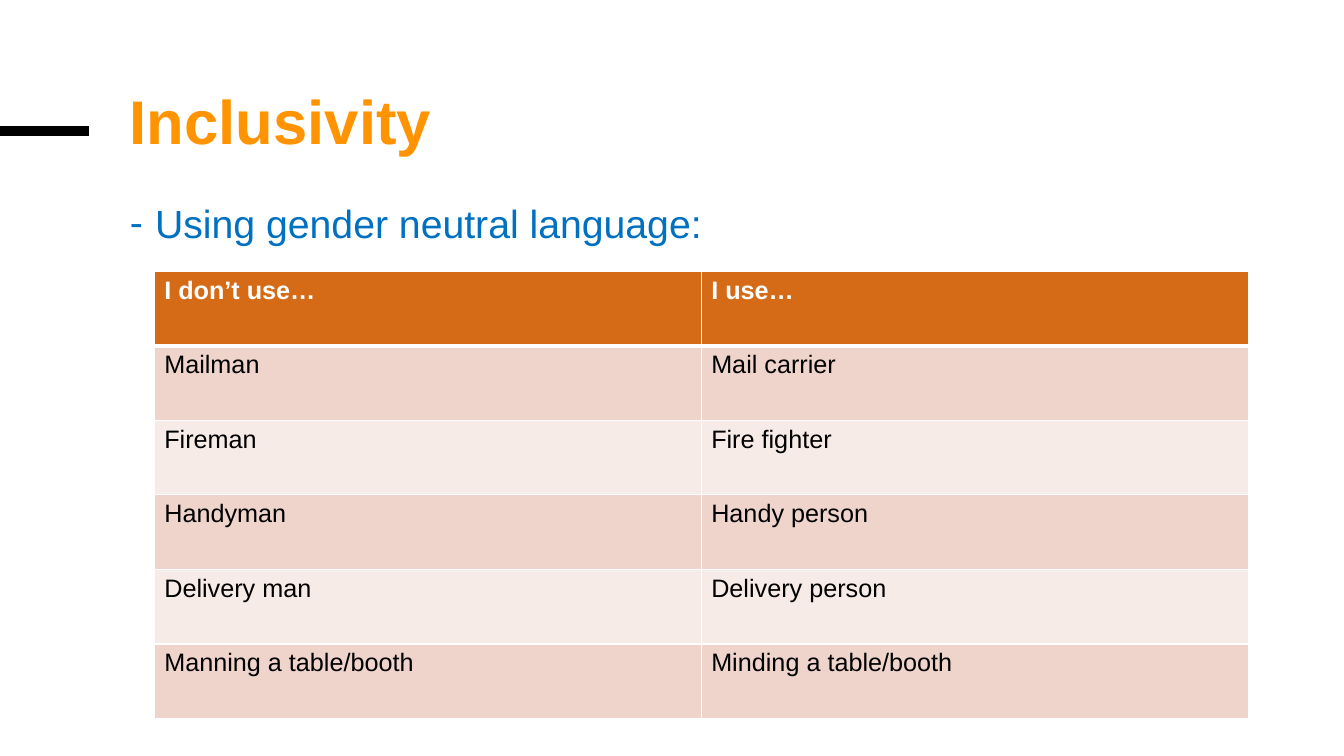
from lxml.etree import SubElement
from pptx import Presentation
from pptx.dml.color import RGBColor
from pptx.enum.shapes import MSO_CONNECTOR
from pptx.oxml.ns import qn
from pptx.util import Inches, Pt

WIDTH, HEIGHT = 13.33, 7.5
LEFT, CONTENT_WIDTH = 1.19, 10.85
TABLE_LEFT, TABLE_TOP, ROW_HEIGHT = 1.53, 2.69, 0.74
HEADER_FILL, BAND_FILLS = "D56A17", ("EFD4CC", "F7EBE8")
WORDING = [
    ("I don’t use…", "I use…"),
    ("Mailman", "Mail carrier"),
    ("Fireman", "Fire fighter"),
    ("Handyman", "Handy person"),
    ("Delivery man", "Delivery person"),
    ("Manning a table/booth", "Minding a table/booth"),
]


def color(value):
    """Turn a hex string into a colour."""
    return RGBColor.from_string(value)


def write(frame, text, size=18, ink="000000", bold=False, spacing=1.0, before=0):
    """Write one formatted paragraph and return it."""
    frame.word_wrap = True
    paragraph = frame.paragraphs[0]
    paragraph.line_spacing = spacing
    paragraph.space_before = Pt(before)
    run = paragraph.add_run()
    run.text = text
    run.font.name = "Arial"
    run.font.size = Pt(size)
    run.font.bold = bold
    run.font.color.rgb = color(ink)
    return paragraph


def add_text(slide, top, height, text, **style):
    """Add a text box in the content column and return its paragraph."""
    box = slide.shapes.add_textbox(
        Inches(LEFT), Inches(top), Inches(CONTENT_WIDTH), Inches(height))
    return write(box.text_frame, text, **style)


def add_dash(paragraph, indent=0.25):
    """Give a paragraph a hanging dash bullet."""
    properties = paragraph._p.get_or_add_pPr()
    properties.set("marL", str(Inches(indent)))
    properties.set("indent", str(-Inches(indent)))
    SubElement(properties, qn("a:buFont"), typeface="Arial")
    SubElement(properties, qn("a:buChar"), char="-")


def add_accent(slide, length, y):
    """Draw the heavy rule that runs in from the slide's left edge."""
    accent = slide.shapes.add_connector(
        MSO_CONNECTOR.STRAIGHT, 0, Inches(y), Inches(length), Inches(y))
    accent.line.color.rgb = color("000000")
    accent.line.width = Pt(6.75)
    SubElement(accent._element.spPr, qn("a:effectLst"))


def add_borders(cell, bottom):
    """Edge a cell in white, with its own top and bottom widths."""
    properties = cell._tc.get_or_add_tcPr()
    widths = {"a:lnL": 1, "a:lnR": 1, "a:lnT": 1, "a:lnB": bottom}
    for position, (side, width) in enumerate(widths.items()):
        edge = SubElement(properties, qn(side), w=str(Pt(width)))
        SubElement(SubElement(edge, qn("a:solidFill")), qn("a:srgbClr"), val="FFFFFF")
        properties.insert(position, edge)


def add_wording_table(slide):
    """Add the table of words to avoid and words to use."""
    table = slide.shapes.add_table(
        len(WORDING), len(WORDING[0]), Inches(TABLE_LEFT), Inches(TABLE_TOP),
        Inches(CONTENT_WIDTH), Inches(ROW_HEIGHT * len(WORDING))).table
    for row, words in enumerate(WORDING):
        header = row == 0
        for column, word in enumerate(words):
            cell = table.cell(row, column)
            cell.fill.solid()
            cell.fill.fore_color.rgb = color(
                HEADER_FILL if header else BAND_FILLS[(row - 1) % 2])
            write(cell.text_frame, word, bold=header,
                  ink="FFFFFF" if header else "000000")
            add_borders(cell, bottom=3 if header else 1)
            if row == 1:
                cell._tc.tcPr.find(qn("a:lnT")).set("w", str(Pt(3)))


def main():
    """Build and save the slide."""
    deck = Presentation()
    deck.slide_width, deck.slide_height = Inches(WIDTH), Inches(HEIGHT)
    slide = deck.slides.add_slide(deck.slide_layouts[6])
    add_accent(slide, length=0.88, y=1.3)
    add_text(slide, 0.89, 1.42, "Inclusivity",
             size=44, ink="FF9300", bold=True, spacing=0.85)
    add_dash(add_text(slide, 1.79, 0.79, "Using gender neutral language:",
                      size=28, ink="0070C0", spacing=1.3, before=10))
    add_wording_table(slide)
    deck.save("out.pptx")


if __name__ == "__main__":
    main()
